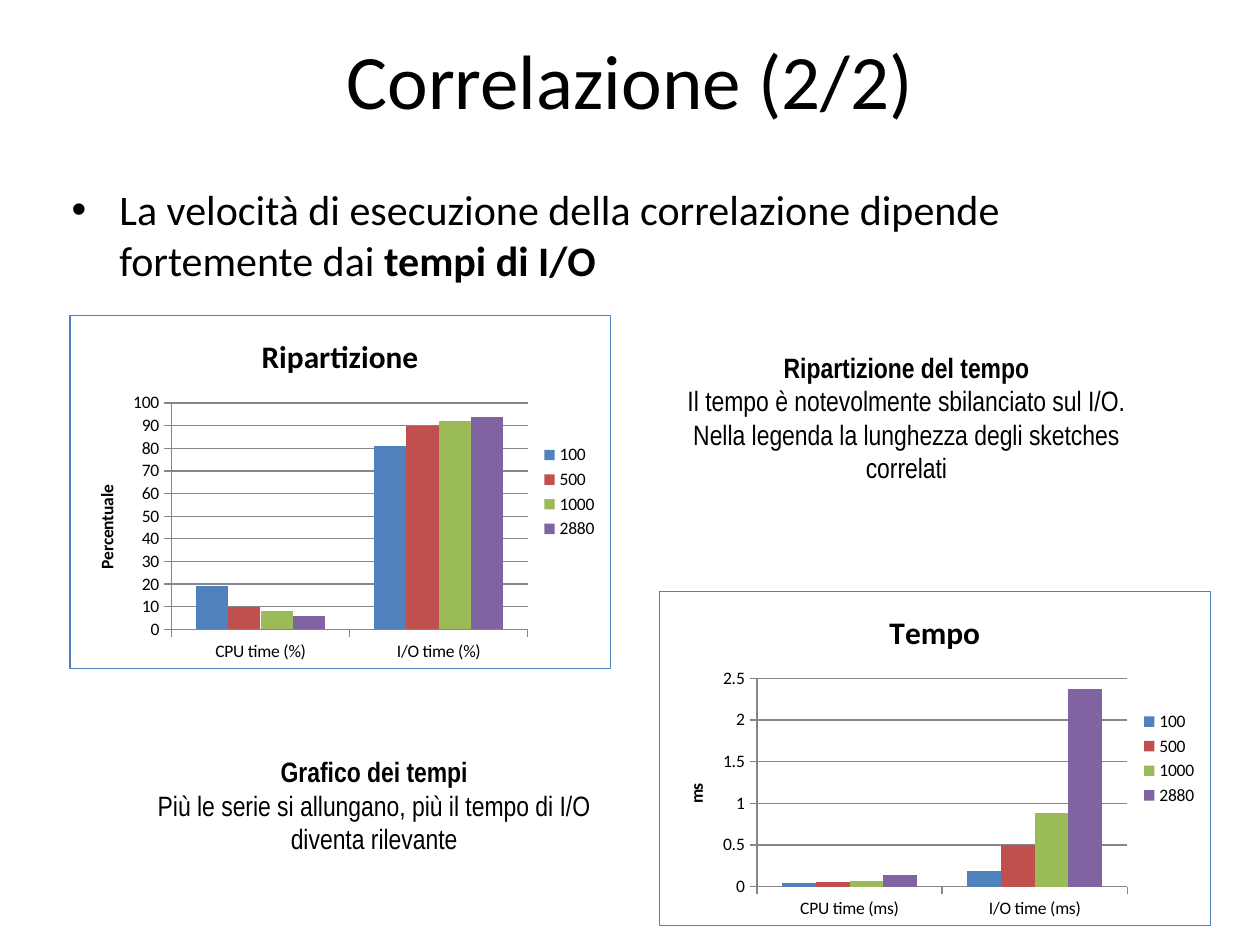
from lxml import etree
from pptx import Presentation
from pptx.chart.data import CategoryChartData
from pptx.dml.color import RGBColor
from pptx.enum import chart as charts, text
from pptx.oxml import parse_xml
from pptx.oxml.ns import nsdecls, qn
from pptx.util import Inches, Pt

BLACK = RGBColor(0, 0, 0)
GRAY = RGBColor(0x86, 0x86, 0x86)
BLUE = RGBColor(0x4F, 0x81, 0xBD)
RED = RGBColor(0xC0, 0x50, 0x4D)
GREEN = RGBColor(0x9B, 0xBB, 0x59)
PURPLE = RGBColor(0x80, 0x64, 0xA2)

deck = Presentation()
deck.slide_width, deck.slide_height = Inches(10), Inches(7.5)
page = deck.slides.add_slide(deck.slide_layouts[6])


def add_text(place, paragraphs, size, font, align):
    frame = page.shapes.add_textbox(*map(Inches, place)).text_frame
    frame.word_wrap = True
    for index, spans in enumerate(paragraphs):
        para = frame.paragraphs[0] if index == 0 else frame.add_paragraph()
        para.alignment = align
        para.font.size = Pt(size)
        para.font.name = font
        para.font.color.rgb = BLACK
        for words, bold in spans:
            span = para.add_run()
            span.text = words
            span.font.bold = bold
    return frame


def style_title(title, words, size):
    title.text_frame.text = words
    font = title.text_frame.paragraphs[0].font
    font.size, font.bold, font.name = Pt(size), True, "Calibri"
    font.color.rgb = BLACK


heading = add_text((0.5, 0, 9, 1.25), [[("Correlazione (2/2)", False)]],
                   44, "Calibri", text.PP_ALIGN.CENTER)
heading.vertical_anchor = text.MSO_ANCHOR.MIDDLE

body = add_text((0.47, 1.41, 9, 1.22), [[
    ("La velocità di esecuzione della correlazione dipende fortemente dai ", False),
    ("tempi di I/O", True),
]], 24, "Calibri", text.PP_ALIGN.LEFT)
bullet = body.paragraphs[0]
bullet.space_before = Pt(4.8)
properties = bullet._p.get_or_add_pPr()
properties.set("marL", str(Inches(0.38)))
properties.set("indent", str(-Inches(0.38)))
etree.SubElement(properties, qn("a:buFont")).set("typeface", "Arial")
etree.SubElement(properties, qn("a:buChar")).set("char", "•")
for tag in ("a:buFont", "a:buChar"):
    properties.find(qn("a:defRPr")).addprevious(properties.find(qn(tag)))

lengths = [("100", BLUE), ("500", RED), ("1000", GREEN), ("2880", PURPLE)]
graphs = [
    ((0.55, 2.5, 4.3, 2.81), "Ripartizione", "Percentuale", "%", 100, 10,
     [(19, 81), (10, 90), (8, 92), (6, 94)]),
    ((5.23, 4.69, 4.38, 2.66), "Tempo", "ms", "ms", 2.5, 0.5,
     [(0.04, 0.19), (0.06, 0.5), (0.07, 0.89), (0.14, 2.37)]),
]
for place, title, axis_title, unit, top, step, rows in graphs:
    data = CategoryChartData()
    data.categories = [f"CPU time ({unit})", f"I/O time ({unit})"]
    for (length, color), values in zip(lengths, rows):
        data.add_series(length, values)
    chart = page.shapes.add_chart(charts.XL_CHART_TYPE.COLUMN_CLUSTERED,
                                  *map(Inches, place), data).chart
    chart.font.size = Pt(10)
    chart.font.name = "Calibri"
    chart.font.color.rgb = BLACK
    chart.has_title = True
    style_title(chart.chart_title, title, 18)
    chart.chart_title.include_in_layout = False
    chart.has_legend = True
    chart.legend.position = charts.XL_LEGEND_POSITION.RIGHT
    chart.legend.include_in_layout = False

    plot = chart.plots[0]
    plot.gap_width = 150
    plot.vary_by_categories = False
    for series, (length, color) in zip(plot.series, lengths):
        series.format.fill.solid()
        series.format.fill.fore_color.rgb = color

    scale = chart.value_axis
    scale.minimum_scale, scale.maximum_scale, scale.major_unit = 0, top, step
    scale.has_major_gridlines = True
    scale.has_title = True
    style_title(scale.axis_title, axis_title, 10)
    for axis in (scale, chart.category_axis):
        axis.major_tick_mark = charts.XL_TICK_MARK.OUTSIDE
    for part in (scale, chart.category_axis, scale.major_gridlines):
        part.format.line.color.rgb = GRAY
        part.format.line.width = Pt(0.75)

    border = parse_xml(
        f'<c:spPr {nsdecls("c", "a")}><a:noFill/><a:ln w="{Pt(0.75)}"><a:solidFill>'
        f'<a:srgbClr val="{BLUE}"/></a:solidFill></a:ln></c:spPr>')
    chart._chartSpace.find(qn("c:txPr")).addprevious(border)

captions = [
    ((5.31, 2.73, 3.77, 1.18), "Ripartizione del tempo",
     "Il tempo è notevolmente sbilanciato sul I/O. "
     "Nella legenda la lunghezza degli sketches correlati"),
    ((0.86, 5.94, 4.22, 0.91), "Grafico dei tempi",
     "Più le serie si allungano, più il tempo di I/O diventa rilevante"),
]
for place, title, words in captions:
    caption = add_text(place, [[(title, True)], [(words, False)]],
                       16, "Arial Narrow", text.PP_ALIGN.CENTER)
    caption.auto_size = text.MSO_AUTO_SIZE.SHAPE_TO_FIT_TEXT

deck.save("out.pptx")
